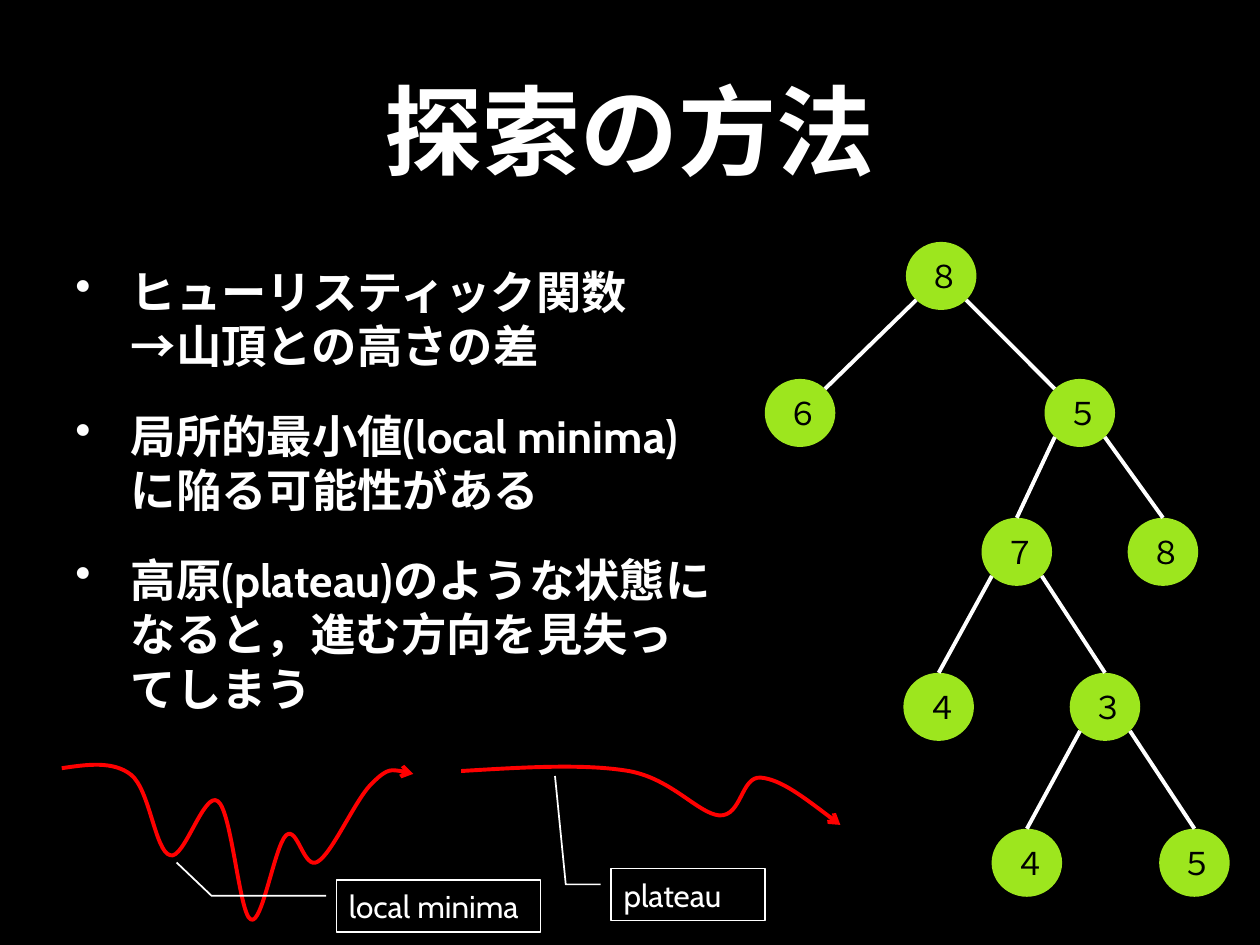
"""Build the slide on search methods with a search tree and two descent curves."""
import math
from typing import NamedTuple

import pptx
import pptx.dml.color
import pptx.enum.shapes
import pptx.enum.text
import pptx.oxml
import pptx.oxml.ns
import pptx.util

BLACK = pptx.dml.color.RGBColor(0x00, 0x00, 0x00)
WHITE = pptx.dml.color.RGBColor(0xFF, 0xFF, 0xFF)
GREEN = pptx.dml.color.RGBColor(0x9D, 0xE6, 0x1E)
RED = pptx.dml.color.RGBColor(0xFF, 0x00, 0x00)
WIDTH, HEIGHT = pptx.util.Inches(10), pptx.util.Inches(7.5)
NODE_WIDTH, NODE_HEIGHT = 5.6, 7.2
DIAGONAL = math.sqrt(0.5)
LEVELS = (29.2, 43.7, 58.4, 74.8, 91.3)
SHAPES = pptx.enum.shapes.MSO_SHAPE
ALIGN = pptx.enum.text.PP_ALIGN
ANCHOR = pptx.enum.text.MSO_ANCHOR

TITLE_FORMAT = {"size": pptx.util.Pt(56), "bold": True, "name": "Cabin"}
BODY_FORMAT = {"size": pptx.util.Pt(25.9), "bold": True, "name": "Cabin"}
LABEL_FORMAT = {"size": pptx.util.Pt(18), "bold": False, "name": "Cabin"}


class Area(NamedTuple):
    """A rectangle in percent of the slide's width and height."""
    left: float
    top: float
    width: float
    height: float


class Node(NamedTuple):
    """A tree node: its digit, centre column, level and parent's index."""
    digit: str
    column: float
    level: int
    parent: int | None = None


class Callout(NamedTuple):
    """A bordered label with a bent leader line."""
    text: str
    area: Area
    adjustments: tuple[float, ...]


TITLE_AREA = Area(8.5, 1.6, 82.9, 24.1)
BODY_AREA = Area(5, 27.3, 52.6, 47.6)
POINTS = (
    "ヒューリスティック関数\v→山頂との高さの差",
    "局所的最小値(local minima)に陥る可能性がある",
    "高原(plateau)のような状態になると，進む方向を見失ってしまう",
)
NODES = (
    Node("８", 74.7, 0),
    Node("６", 63.5, 1, 0),
    Node("５", 85.7, 1, 0),
    Node("７", 80.7, 2, 2),
    Node("８", 92.3, 2, 2),
    Node("４", 74.5, 3, 3),
    Node("３", 87.7, 3, 3),
    Node("４", 81.5, 4, 6),
    Node("５", 94.8, 4, 6),
)
CURVES = (
    ((4.9, 81.3), (6.9, 80.9), (9, 80.5), (10.4, 82), (11.9, 83.6), (12.3, 90.1),
     (13.5, 90.5), (14.6, 91.1), (16.2, 83.6), (17.3, 84.8), (18.4, 85.9),
     (19, 96.8), (19.9, 97.3), (20.8, 98), (21.8, 89.5), (22.7, 88.4),
     (23.6, 87.3), (24.1, 92.1), (25.2, 91.2), (26.4, 90.3), (28.3, 84.3),
     (29.6, 82.8), (30.8, 81.2), (31.8, 81.5), (32.8, 81.9)),
    ((36.6, 81.6), (41.5, 81.2), (46.4, 80.8), (49.9, 81.6), (53.3, 82.4),
     (55.4, 86.1), (57.1, 86.3), (58.9, 86.4), (58.8, 82.1), (60.4, 82.3),
     (62, 82.5), (64.3, 84.9), (66.7, 87.3)),
)
CALLOUTS = (
    Callout("local minima", Area(26.7, 93.1, 16.2, 5.5),
            (0.308, -0.051, 0.308, -0.612, -0.333, -0.783)),
    Callout("plateau", Area(48.5, 91.9, 12.2, 5.5),
            (0.308, -0.068, 0.308, -0.295, -1.778, -0.365)),
)


def across(percent: float) -> int:
    """Turn a share of the slide's width into a length."""
    return round(WIDTH * percent / 100)


def down(percent: float) -> int:
    """Turn a share of the slide's height into a length."""
    return round(HEIGHT * percent / 100)


def place(area: Area) -> tuple[int, int, int, int]:
    """Return an area's left, top, width and height as lengths."""
    return across(area.left), down(area.top), across(area.width), down(area.height)


def element(tag: str, **attributes: str):
    """Make a drawing element with the given attributes."""
    result = pptx.oxml.parse_xml(f"<a:{tag} {pptx.oxml.ns.nsdecls('a')}/>")
    for name, value in attributes.items():
        result.set(name, value)
    return result


def write(paragraph, text: str, color, formats: dict, alignment) -> None:
    """Fill a paragraph and format its runs for Latin and East Asian text."""
    paragraph.text = text
    paragraph.alignment = alignment
    for run in paragraph.runs:
        for name, value in formats.items():
            setattr(run.font, name, value)
        run.font.color.rgb = color
        run.font._element.append(element("ea", typeface=formats["name"]))


def add_points(slide) -> None:
    """Add the bulleted list."""
    frame = slide.shapes.add_textbox(*place(BODY_AREA)).text_frame
    frame.word_wrap = True
    for index, text in enumerate(POINTS):
        paragraph = frame.add_paragraph() if index else frame.paragraphs[0]
        properties = paragraph._p.get_or_add_pPr()
        indent = pptx.util.Inches(0.44)
        properties.set("marL", str(indent))
        properties.set("indent", str(-indent))
        properties.append(element("buChar", char="•"))
        paragraph.space_before = pptx.util.Pt(20 if index else 0)
        write(paragraph, text, WHITE, BODY_FORMAT, ALIGN.LEFT)


def add_node(slide, node: Node):
    """Add one tree node."""
    area = Area(node.column - NODE_WIDTH / 2, LEVELS[node.level] - NODE_HEIGHT / 2,
                NODE_WIDTH, NODE_HEIGHT)
    shape = slide.shapes.add_shape(SHAPES.OVAL, *place(area))
    shape.shadow.inherit = False
    shape.fill.solid()
    shape.fill.fore_color.rgb = GREEN
    shape.line.fill.background()
    shape.text_frame.word_wrap = False
    shape.text_frame.vertical_anchor = ANCHOR.MIDDLE
    write(shape.text_frame.paragraphs[0], node.digit, BLACK, LABEL_FORMAT, ALIGN.LEFT)
    return shape


def add_edge(slide, parent: Node, child: Node, child_shape) -> None:
    """Join a parent's lower flank to its child."""
    side = math.copysign(1, child.column - parent.column)
    reach, rise = NODE_WIDTH / 2 * DIAGONAL, NODE_HEIGHT / 2 * DIAGONAL
    connector = slide.shapes.add_connector(
        pptx.enum.shapes.MSO_CONNECTOR.STRAIGHT,
        across(parent.column + side * reach), down(LEVELS[parent.level] + rise),
        across(child.column - side * reach), down(LEVELS[child.level] - rise))
    if parent.level > 0:
        connector.end_connect(child_shape, 0)
    connector.line.color.rgb = WHITE
    connector.line.width = pptx.util.Pt(2.25)
    connector._element.spPr.append(element("effectLst"))


def add_curve(slide, points: tuple[tuple[float, float], ...]) -> None:
    """Add an arrowed curve, each three points after the first being one Bézier."""
    start, *rest = [(across(x), down(y)) for x, y in points]
    builder = slide.shapes.build_freeform(*start)
    builder.add_line_segments(rest, close=False)
    shape = builder.convert_to_shape()
    segments = list(shape._element.iter(pptx.oxml.ns.qn("a:lnTo")))
    for first, second, third in zip(segments[::3], segments[1::3], segments[2::3]):
        bezier = element("cubicBezTo")
        first.addprevious(bezier)
        for segment in (first, second, third):
            bezier.append(segment[0])
            segment.getparent().remove(segment)
    shape.shadow.inherit = False
    shape.fill.background()
    shape.line.color.rgb = RED
    shape.line.width = pptx.util.Pt(2.25)
    shape.line._get_or_add_ln().append(element("tailEnd", type="arrow"))


def add_callout(slide, callout: Callout) -> None:
    """Add a label with its leader line."""
    shape = slide.shapes.add_shape(SHAPES.LINE_CALLOUT_2, *place(callout.area))
    for index, value in enumerate(callout.adjustments):
        shape.adjustments[index] = value
    shape.shadow.inherit = False
    shape.fill.background()
    shape.line.color.rgb = WHITE
    shape.line.width = pptx.util.Pt(1)
    shape.text_frame.vertical_anchor = ANCHOR.MIDDLE
    write(shape.text_frame.paragraphs[0], callout.text, WHITE, LABEL_FORMAT, ALIGN.LEFT)


def main() -> None:
    """Build and save the presentation."""
    presentation = pptx.Presentation()
    presentation.slide_width, presentation.slide_height = WIDTH, HEIGHT
    slide = presentation.slides.add_slide(presentation.slide_layouts[5])
    slide.background.fill.solid()
    slide.background.fill.fore_color.rgb = BLACK
    title = slide.shapes.title
    title.left, title.top, title.width, title.height = place(TITLE_AREA)
    title.text_frame.vertical_anchor = ANCHOR.MIDDLE
    write(title.text_frame.paragraphs[0], "探索の方法", WHITE, TITLE_FORMAT, ALIGN.CENTER)
    add_points(slide)
    for node in NODES:
        shape = add_node(slide, node)
        if node.parent is not None:
            add_edge(slide, NODES[node.parent], node, shape)
    for points in CURVES:
        add_curve(slide, points)
    for callout in CALLOUTS:
        add_callout(slide, callout)
    presentation.save("out.pptx")


if __name__ == "__main__":
    main()
